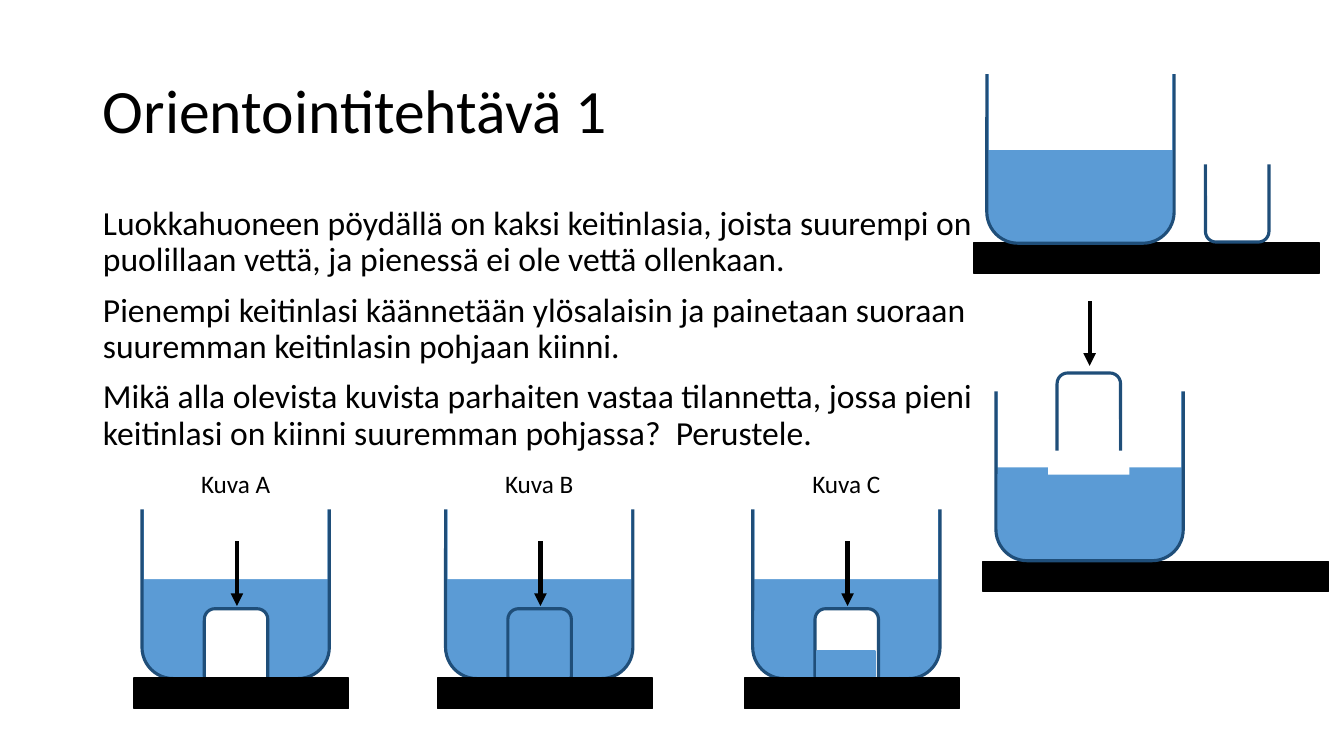
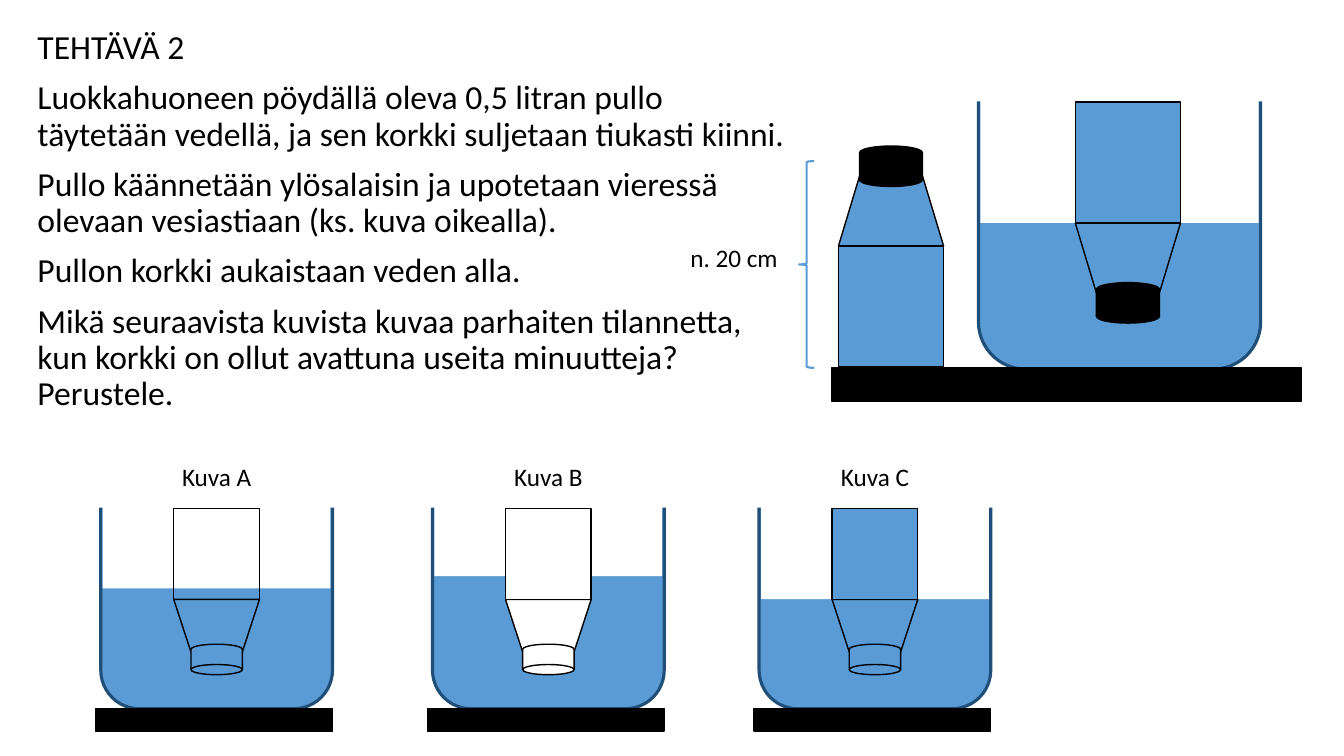
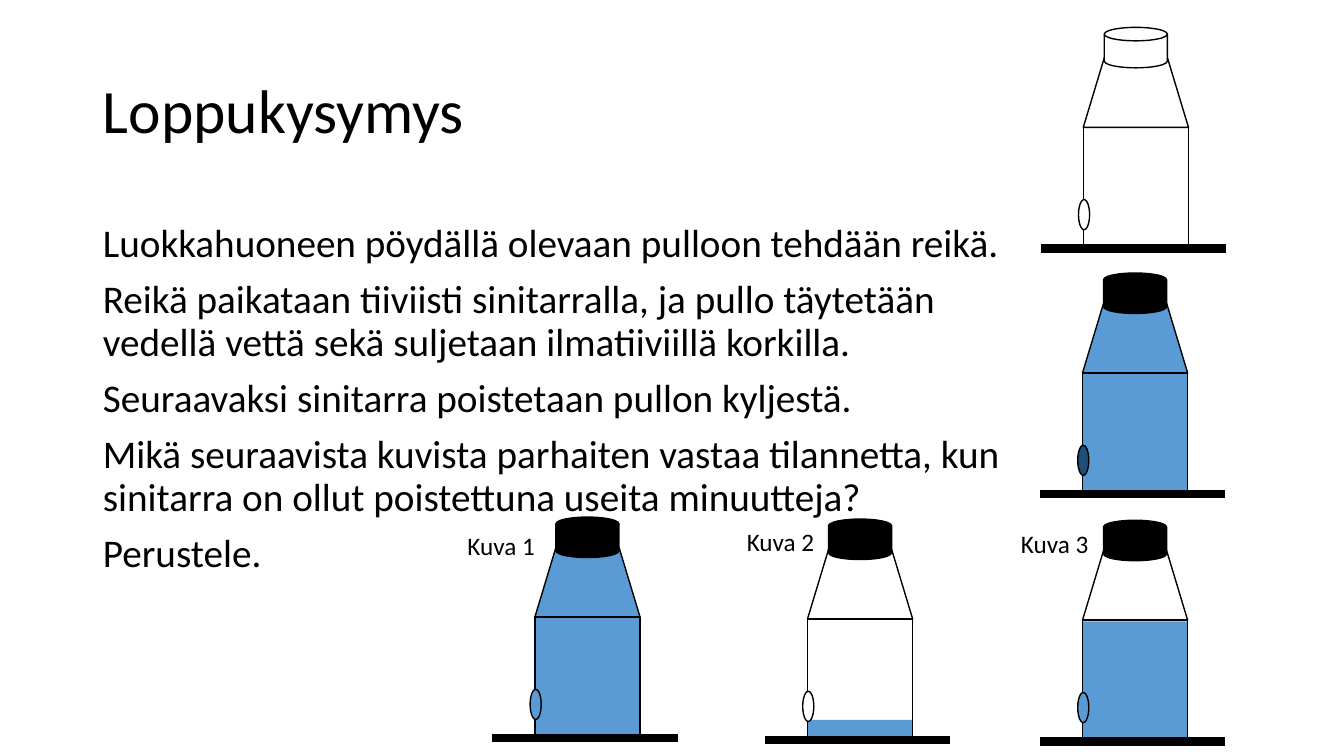
from dataclasses import dataclass

from lxml import etree
from pptx import Presentation
from pptx.dml.color import RGBColor
from pptx.enum.shapes import MSO_CONNECTOR, MSO_SHAPE
from pptx.enum.text import MSO_ANCHOR, MSO_AUTO_SIZE, PP_ALIGN
from pptx.oxml.ns import qn
from pptx.util import Cm, Pt

RECT = MSO_SHAPE.RECTANGLE
ROUND = MSO_SHAPE.ROUNDED_RECTANGLE
OVAL = MSO_SHAPE.OVAL
DISK = MSO_SHAPE.FLOWCHART_MAGNETIC_DISK
FUNNEL = MSO_SHAPE.FLOWCHART_MANUAL_OPERATION
BRACE = MSO_SHAPE.LEFT_BRACE
STRAIGHT = MSO_CONNECTOR.STRAIGHT
LEFT, CENTER = PP_ALIGN.LEFT, PP_ALIGN.CENTER
TOP, MIDDLE = MSO_ANCHOR.TOP, MSO_ANCHOR.MIDDLE
NO_FIT = MSO_AUTO_SIZE.NONE


@dataclass(frozen=True)
class Theme:
    font: str = "Calibri"
    black: RGBColor = RGBColor(0x00, 0x00, 0x00)
    white: RGBColor = RGBColor(0xFF, 0xFF, 0xFF)
    water: RGBColor = RGBColor(0x5B, 0x9B, 0xD5)
    glass: RGBColor = RGBColor(0x1F, 0x4E, 0x79)
    title: int = 44
    large: int = 28
    body: int = 24
    label: int = 18
    thin: float = 1
    brace: float = 1.5
    rim: float = 2.25
    arrow: float = 3
    floor: float = 6


T = Theme()
BEAKER = (4.72, 5.11)
CUP = (1.6, 2.34)
TANK = (5.84, 6.07)
BOTTLE = (2.65, 5.57)


def write(para, text, size, align=LEFT):
    run = para.add_run()
    run.text = text
    run.font.name, run.font.size = T.font, Pt(size)
    run.font.color.rgb = T.black
    para.alignment = align


def fill_holder(holder, box, texts, size, anchor=TOP, before=0):
    """Move a placeholder and give it unbulleted paragraphs."""
    holder.left, holder.top, holder.width, holder.height = map(Cm, box)
    frame = holder.text_frame
    frame.word_wrap, frame.auto_size = True, NO_FIT
    frame.vertical_anchor = anchor
    for i, text in enumerate(texts):
        para = frame.add_paragraph() if i else frame.paragraphs[0]
        write(para, text, size)
        para.line_spacing, para.space_before = 0.9, Pt(before)
        props = para._p.get_or_add_pPr()
        props.set("marL", "0")
        props.set("indent", "0")
        etree.SubElement(props, qn("a:buNone"))


def title(slide, text, width):
    fill_holder(slide.shapes.title, (2.34, 1.02, width, 3.68), [text],
                T.title, MIDDLE)


def body(slide, box, texts, size):
    fill_holder(slide.placeholders[1], box, texts, size, before=10)


def label(slide, x, y, width, text):
    box = slide.shapes.add_textbox(Cm(x), Cm(y), Cm(width), Cm(1.02))
    box.text_frame.word_wrap = True
    write(box.text_frame.paragraphs[0], text, T.label)


def shape(slide, kind, x, y, w, h, fill=None, line=None, weight=T.thin):
    item = slide.shapes.add_shape(kind, Cm(x), Cm(y), Cm(w), Cm(h))
    item.shadow.inherit = False
    if fill is None:
        item.fill.background()
    else:
        item.fill.solid()
        item.fill.fore_color.rgb = fill
    if line is None:
        item.line.fill.background()
    else:
        item.line.color.rgb = line
        item.line.width = Pt(weight)
    return item


def stroke(slide, x1, y1, x2, y2, weight, head=False):
    item = slide.shapes.add_connector(STRAIGHT, Cm(x1), Cm(y1), Cm(x2), Cm(y2))
    item.line.color.rgb = T.black
    item.line.width = Pt(weight)
    props = item.element.spPr
    if head:
        etree.SubElement(props.find(qn("a:ln")), qn("a:tailEnd"),
                         type="triangle")
    etree.SubElement(props, qn("a:effectLst"))


def arrow(slide, x, y):
    stroke(slide, x, y, x, y + 1.63, T.arrow, head=True)


def table(slide, x, y, w, h=0.76):
    shape(slide, RECT, x, y, w, h, T.black, T.black)


def vessel(slide, x, y, size, air, fill=T.water, text="", flip=False):
    """Open glass: air is the empty share of its height; flip turns it over."""
    w, h = size

    def mask(left, top, width, bottom):
        start = h - bottom if flip else top
        return shape(slide, RECT, left, y + start, width, bottom - top, T.white)

    shape(slide, ROUND, x, y, w, h, fill, T.glass, T.rim)
    mask(x + 0.05, -0.025 * h, w - 0.1, air * h)
    lid = mask(x - 0.14 * w, -0.095 * h, 1.28 * w, 0.165 * h)
    if text:
        lid.text_frame.vertical_anchor = MIDDLE
        write(lid.text_frame.paragraphs[0], text, T.label, CENTER)


def bottle(slide, x, y, size, cap, neck, trunk, flip=False):
    """Bottle with the fill of its three parts; flip puts the cap below."""
    w, h = size
    parts = (
        (FUNNEL, 0, 0.137, 1, 0.315, neck, not flip),
        (DISK, 0.2, 0, 0.6, 0.183, cap, flip),
        (RECT, 0, 0.452, 1, 0.548, trunk, False),
    )
    for kind, left, top, wide, high, fill, turn in parts:
        start = 1 - top - high if flip else top
        part = shape(slide, kind, x + left * w, y + start * h,
                     wide * w, high * h, fill, T.black)
        part.rotation = 180 if turn else 0


def beaker_task(slide):
    title(slide, "Orientointitehtävä 1", 14.22)
    body(slide, (2.34, 5.08, 23.04, 12.09), [
        "Luokkahuoneen pöydällä on kaksi keitinlasia, joista suurempi on "
        "puolillaan vettä, ja pienessä ei ole vettä ollenkaan.",
        "Pienempi keitinlasi käännetään ylösalaisin ja painetaan suoraan "
        "suuremman keitinlasin pohjaan kiinni.",
        "Mikä alla olevista kuvista parhaiten vastaa tilannetta, jossa pieni "
        "keitinlasi on kiinni suuremman pohjassa?  Perustele.",
    ], T.body)

    table(slide, 24.54, 6.12, 8.71)
    vessel(slide, 24.87, 1.02, BEAKER, 0.54)
    vessel(slide, 30.38, 3.76, CUP, 0.5, None)
    table(slide, 24.77, 14.15, 8.71)
    vessel(slide, 25.1, 9.02, BEAKER, 0.54)
    arrow(slide, 27.46, 7.59)
    vessel(slide, 26.64, 9.4, CUP, 0.5, None, flip=True)

    options = (("A", 3.58, T.white, False), ("B", 11.23, T.water, False),
               ("C", 18.97, T.white, True))
    for name, x, inside, partial in options:
        vessel(slide, x, 11.99, BEAKER, 0.51, text=f"Kuva {name}")
        shape(slide, ROUND, x + 1.57, 15.34, 1.6, 1.96, inside, T.glass, T.rim)
        if partial:
            shape(slide, RECT, x + 1.63, 16.43, 1.45, 0.61,
                  T.water, T.water, T.rim)
        arrow(slide, x + 2.39, 13.64)
        table(slide, x - 0.2, 17.09, 5.41)


def bottle_task(slide):
    holder = slide.shapes.title.element
    holder.getparent().remove(holder)
    body(slide, (0.69, 0.64, 19.46, 12.09), [
        "TEHTÄVÄ 2",
        "Luokkahuoneen pöydällä oleva 0,5 litran pullo täytetään vedellä, ja "
        "sen korkki suljetaan tiukasti kiinni.",
        "Pullo käännetään ylösalaisin ja upotetaan vieressä olevaan "
        "vesiastiaan (ks. kuva oikealla).",
        "Pullon korkki aukaistaan veden alla.",
        "Mikä seuraavista kuvista kuvaa parhaiten tilannetta, kun korkki on "
        "ollut avattuna useita minuutteja? Perustele.",
    ], T.body)

    vessel(slide, 24.66, 1.22, (7.11, 8.08), 0.544)
    bottle(slide, 21.13, 3.68, BOTTLE, T.black, T.water, T.water)
    bottle(slide, 27.1, 2.57, BOTTLE, T.black, T.water, T.water, flip=True)
    table(slide, 20.96, 9.27, 11.84, 0.84)
    shape(slide, BRACE, 20.14, 4.06, 0.38, 5.21, None, T.water, T.brace)
    label(slide, 17.15, 5.99, 3, "n. 20 cm")

    y = 11.79
    options = (("A", 2.54, 0.5, T.water, None),
               ("B", 10.9, 0.45, T.white, T.white),
               ("C", 19.13, 0.545, T.water, T.water))
    for name, x, air, neck, trunk in options:
        vessel(slide, x, y, TANK, air, text=f"Kuva {name}")
        bottle(slide, x + 1.84, y + 1.02, (2.16, 4.19), neck, neck, trunk,
               flip=True)
        table(slide, x - 0.13, y + TANK[1], 5.97, 0.56)


def hole_task(slide):
    title(slide, "Loppukysymys", 29.21)
    body(slide, (2.34, 5.51, 23.37, 12.09), [
        "Luokkahuoneen pöydällä olevaan pulloon tehdään reikä.",
        "Reikä paikataan tiiviisti sinitarralla, ja pullo täytetään vedellä "
        "vettä sekä suljetaan ilmatiiviillä korkilla.",
        "Seuraavaksi sinitarra poistetaan pullon kyljestä.",
        "Mikä seuraavista kuvista parhaiten vastaa tilannetta, kun sinitarra "
        "on ollut poistettuna useita minuutteja?",
        "Perustele.",
    ], T.large)

    w, h = BOTTLE
    # Left, top, cap, neck, hole, depth of water in the trunk
    bottles = (
        (27.3, 0.69, T.white, None, T.white, 0),
        (27.28, 6.88, T.black, T.water, T.glass, 3.05),
        (13.48, 13.03, T.black, T.water, T.water, 3.05),
        (20.35, 13.08, T.black, None, T.white, 0.51),
        (27.28, 13.11, T.black, None, T.water, 3.02),
    )
    for x, y, cap, neck, hole, depth in bottles:
        if depth:
            shape(slide, RECT, x, y + h - depth, w, depth, T.water)
        bottle(slide, x, y, BOTTLE, cap, neck, None)
        shape(slide, OVAL, x - 0.12, y + 4.34, 0.28, 0.76, hole, T.black)
        stroke(slide, x - 1.07, y + h, x + 3.6, y + h, T.floor)

    spots = ((11.53, 13.23), (18.57, 13.13), (25.48, 13.18))
    for number, (x, y) in enumerate(spots, 1):
        label(slide, x, y, 3.66, f"Kuva {number}")


def main():
    deck = Presentation()
    deck.slide_width, deck.slide_height = Cm(33.87), Cm(19.05)
    for build in (beaker_task, bottle_task, hole_task):
        build(deck.slides.add_slide(deck.slide_layouts[1]))
    deck.save("out.pptx")


if __name__ == "__main__":
    main()
